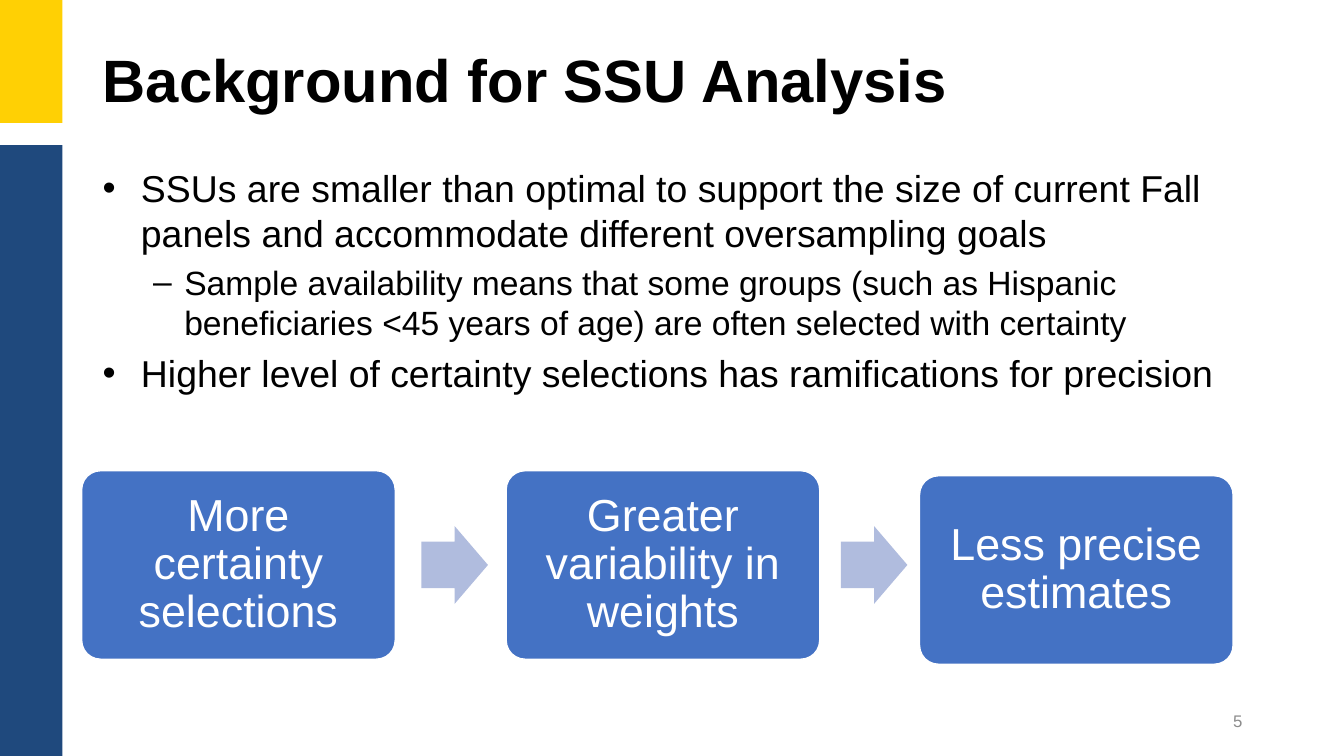
"""Build the slide on the background for SSU analysis."""
from lxml.etree import SubElement
from pptx import Presentation
from pptx.dml.color import RGBColor
from pptx.enum.shapes import MSO_SHAPE as Shape
from pptx.enum.text import MSO_ANCHOR as Anchor, PP_ALIGN as Align
from pptx.oxml.ns import qn
from pptx.util import Inches, Pt


def paint(fill, colour):
    fill.solid()
    fill.fore_color.rgb = RGBColor.from_string(colour)


def write(frame, lines, size, colour="000000", anchor=Anchor.MIDDLE, align=Align.LEFT):
    frame.word_wrap = True
    frame.vertical_anchor = anchor
    frame.text = "\n".join(lines)
    for paragraph in frame.paragraphs:
        paragraph.alignment = align
        font = paragraph.runs[0].font
        font.name, font.size = "Arial", Pt(size)
        paint(font.fill, colour)


deck = Presentation()
deck.slide_width, deck.slide_height = Inches(13.33), Inches(7.5)
slide = deck.slides.add_slide(deck.slide_layouts[6])
shapes = slide.shapes

band_width = Inches(0.62)
for top, height, colour in [(0, 1.22, "FFD004"), (1.44, 6.06, "1F497D")]:
    band = shapes.add_shape(Shape.RECTANGLE, 0, Inches(top), band_width, Inches(height))
    band.shadow.inherit = False
    paint(band.fill, colour)
    band.line.fill.background()

margin = Inches(0.92)
title = shapes.add_textbox(margin, Inches(0.22), Inches(11.5), Inches(1.21)).text_frame
write(title, ["Background for SSU Analysis"], 42.7)
title.paragraphs[0].line_spacing = 0.9
title.paragraphs[0].runs[0].font.bold = True

points = [
    (0, "SSUs are smaller than optimal to support the size of current Fall panels "
        "and accommodate different oversampling goals"),
    (1, "Sample availability means that some groups (such as Hispanic beneficiaries "
        "<45 years of age) are often selected with certainty"),
    (0, "Higher level of certainty selections has ramifications for precision"),
]
levels = [("•", 26.7, 0.38, -0.38), ("–", 24, 0.81, -0.31)]
body = shapes.add_textbox(margin, Inches(1.59), Inches(11.63), Inches(5.03)).text_frame
write(body, [text for _, text in points], 26.7, anchor=Anchor.TOP)
for paragraph, (level, _) in zip(body.paragraphs, points):
    mark, size, indent, hanging = levels[level]
    paragraph.level = level
    paragraph.space_before = Pt(0.2 * size)
    paragraph.runs[0].font.size = Pt(size)
    properties = paragraph._p.get_or_add_pPr()
    properties.set("marL", str(Inches(indent)))
    properties.set("indent", str(Inches(hanging)))
    SubElement(properties, qn("a:buFont")).set("typeface", "Arial")
    SubElement(properties, qn("a:buChar")).set("char", mark)

page_number = shapes.add_textbox(Inches(9.42), Inches(6.95), Inches(3), Inches(0.4))
write(page_number.text_frame, ["5"], 12, "8C8C8C", align=Align.RIGHT)

steps = [
    (0.81, 4.67, "More certainty selections"),
    (5.02, 4.67, "Greater variability in weights"),
    (9.12, 4.72, "Less precise estimates"),
]
for left, top, text in steps:
    step = shapes.add_shape(
        Shape.ROUNDED_RECTANGLE, Inches(left), Inches(top), Inches(3.11), Inches(1.87))
    step.adjustments[0] = 0.1
    step.shadow.inherit = False
    paint(step.fill, "4472C4")
    paint(step.line.fill, "FFFFFF")
    step.line.width = Pt(1)
    frame = step.text_frame
    frame.margin_left = frame.margin_right = Inches(0.13)
    frame.margin_top = frame.margin_bottom = Inches(0.13)
    write(frame, [text], 32, "FFFFFF", align=Align.CENTER)
    frame.paragraphs[0].line_spacing = 0.9

for left in (4.18, 8.34):
    arrow = shapes.add_shape(
        Shape.RIGHT_ARROW, Inches(left), Inches(5.22), Inches(0.66), Inches(0.77))
    arrow.adjustments[0], arrow.adjustments[1] = 0.6, 0.5
    arrow.shadow.inherit = False
    paint(arrow.fill, "B0BCDE")
    arrow.line.fill.background()

deck.save("out.pptx")
